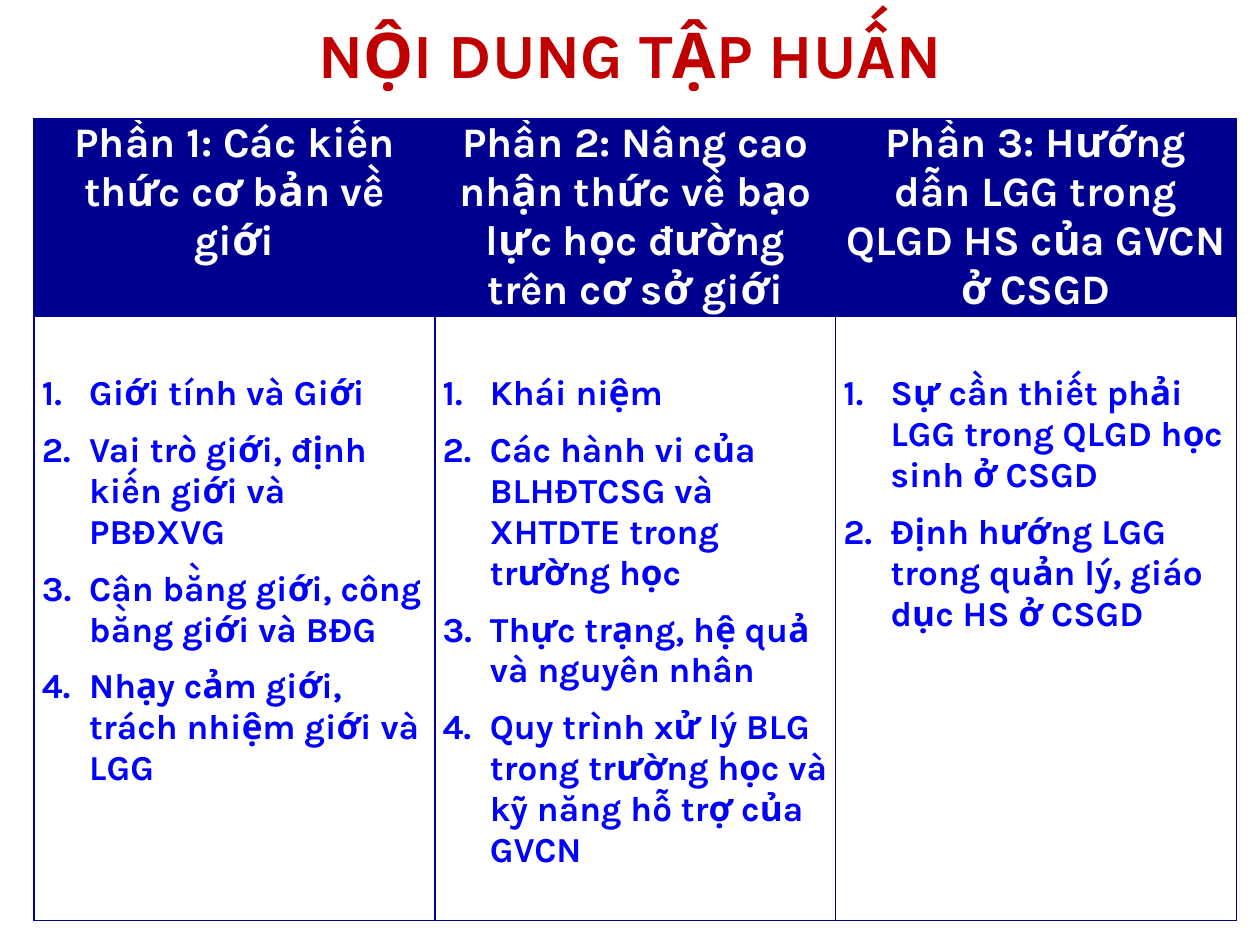
import pptx
import pptx.dml.color
import pptx.enum.text
import pptx.oxml.ns
import pptx.util
from lxml import etree

Pt = pptx.util.Pt
RGBColor = pptx.dml.color.RGBColor
PP_ALIGN = pptx.enum.text.PP_ALIGN
MSO_ANCHOR = pptx.enum.text.MSO_ANCHOR
qn = pptx.oxml.ns.qn

RED = RGBColor(0xC0, 0x00, 0x00)
NAVY = RGBColor(0x00, 0x00, 0x90)
BLUE = RGBColor(0x00, 0x00, 0xFF)
WHITE = RGBColor(0xFF, 0xFF, 0xFF)
FONT = "Karla"

PARTS = [
    ("Phần 1: Các kiến thức cơ bản về giới", [
        "Giới tính và Giới",
        "Vai trò giới, định kiến giới và PBĐXVG",
        "Cân bằng giới, công bằng giới và BĐG",
        "Nhạy cảm giới, trách nhiệm giới và LGG",
    ]),
    ("Phần 2: Nâng cao nhận thức về bạo lực học đường trên cơ sở giới", [
        "Khái niệm",
        "Các hành vi của BLHĐTCSG và XHTDTE trong trường học",
        "Thực trạng, hệ quả và nguyên nhân",
        "Quy trình xử lý BLG trong trường học và kỹ năng hỗ trợ của GVCN",
    ]),
    ("Phần 3: Hướng dẫn LGG trong QLGD HS của GVCN ở CSGD", [
        "Sự cần thiết phải LGG trong QLGD học sinh ở CSGD",
        "Định hướng LGG trong quản lý, giáo dục HS ở CSGD",
    ]),
]
COLUMN_WIDTH = 229
ROW_HEIGHTS = [113, 345]
NUMBER_INDENT = Pt(27)


def add_run(paragraph, text, size, color):
    run = paragraph.add_run()
    run.text = text
    run.font.name = FONT
    run.font.size = Pt(size)
    run.font.bold = True
    run.font.color.rgb = color


def format_cell(cell, fill_color, margin_top):
    """Set margins, borders and fill; borders must precede the fill in the XML."""
    cell.margin_left = cell.margin_right = Pt(4.5)
    cell.margin_top = Pt(margin_top)
    cell.margin_bottom = 0
    cell.vertical_anchor = MSO_ANCHOR.TOP
    properties = cell._tc.get_or_add_tcPr()
    for side in ("a:lnL", "a:lnR", "a:lnT", "a:lnB"):
        line = etree.SubElement(properties, qn(side), w=str(Pt(1)))
        fill = etree.SubElement(line, qn("a:solidFill"))
        etree.SubElement(fill, qn("a:srgbClr"), val=str(NAVY))
    cell.fill.solid()
    cell.fill.fore_color.rgb = fill_color


presentation = pptx.Presentation()
presentation.slide_width = Pt(720)
presentation.slide_height = Pt(540)
slide = presentation.slides.add_slide(presentation.slide_layouts[5])

title = slide.shapes.title
title.left, title.top, title.width, title.height = Pt(49.7), Pt(8), Pt(620.6), Pt(45.4)
title.text_frame.vertical_anchor = MSO_ANCHOR.MIDDLE
title_paragraph = title.text_frame.paragraphs[0]
title_paragraph.alignment = PP_ALIGN.CENTER
add_run(title_paragraph, "NỘI DUNG TẬP HUẤN", 36, RED)

table = slide.shapes.add_table(
    2, len(PARTS), Pt(19.5), Pt(68),
    Pt(COLUMN_WIDTH * len(PARTS)), Pt(sum(ROW_HEIGHTS))).table
for row, height in zip(table.rows, ROW_HEIGHTS):
    row.height = Pt(height)

for column, (heading, topics) in enumerate(PARTS):
    table.columns[column].width = Pt(COLUMN_WIDTH)

    heading_cell = table.cell(0, column)
    format_cell(heading_cell, NAVY, 0)
    paragraph = heading_cell.text_frame.paragraphs[0]
    paragraph.alignment = PP_ALIGN.CENTER
    add_run(paragraph, heading, 24, WHITE)

    topics_cell = table.cell(1, column)
    format_cell(topics_cell, WHITE, 32.4)
    for index, topic in enumerate(topics):
        if index == 0:
            paragraph = topics_cell.text_frame.paragraphs[0]
        else:
            paragraph = topics_cell.text_frame.add_paragraph()
            paragraph.space_before = Pt(9)
        paragraph.alignment = PP_ALIGN.LEFT
        properties = paragraph._p.get_or_add_pPr()
        properties.set("marL", str(NUMBER_INDENT))
        properties.set("indent", str(-NUMBER_INDENT))
        etree.SubElement(properties, qn("a:buFont"), typeface="+mj-lt")
        etree.SubElement(properties, qn("a:buAutoNum"), type="arabicPeriod")
        add_run(paragraph, topic, 20, BLUE)

presentation.save("out.pptx")
